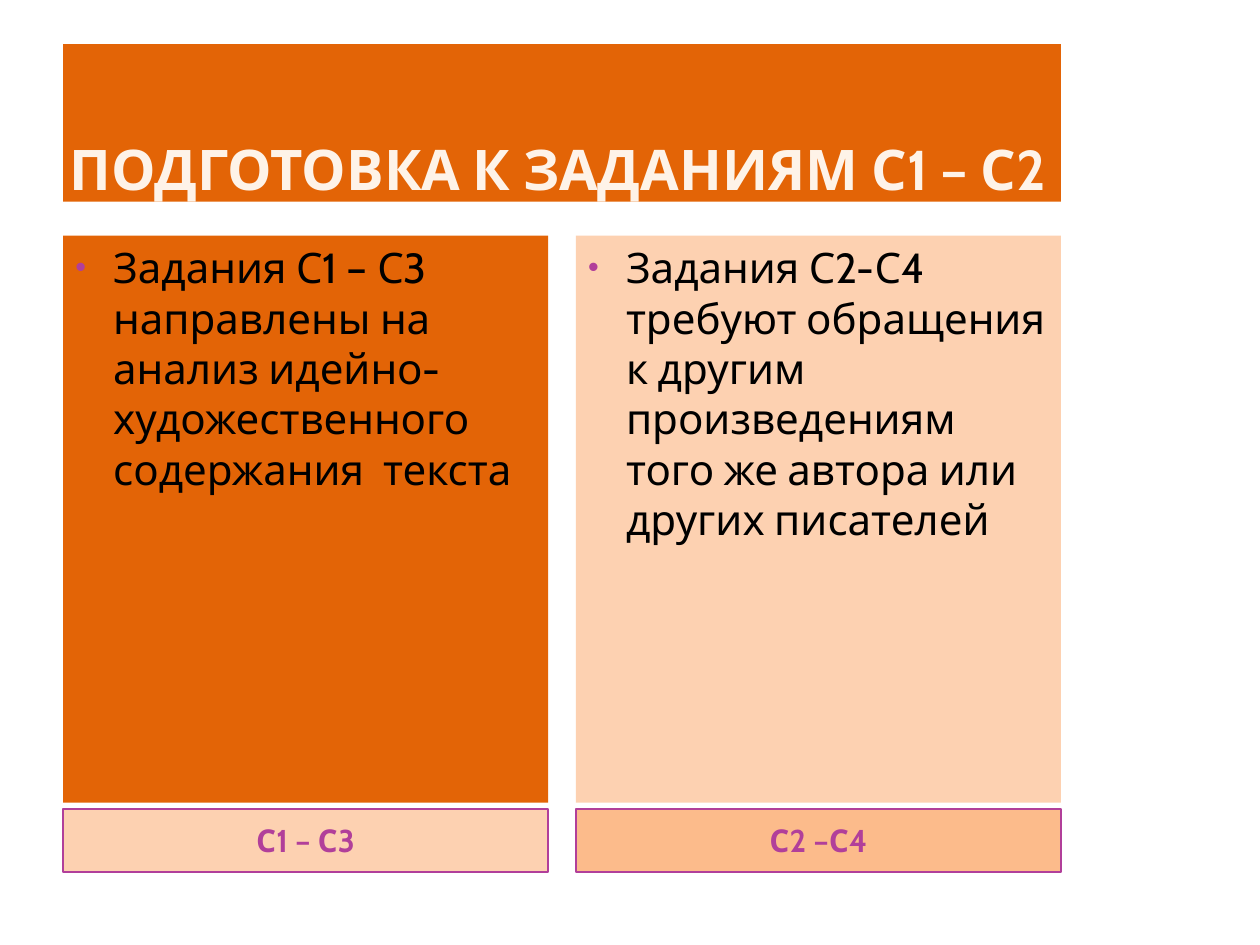
from dataclasses import dataclass
from lxml.etree import SubElement
from pptx import Presentation
from pptx.dml.color import RGBColor
from pptx.enum.shapes import MSO_SHAPE
from pptx.enum.text import MSO_ANCHOR, PP_ALIGN
from pptx.oxml.ns import qn
from pptx.util import Inches, Pt


@dataclass(frozen=True)
class Theme:
    font: str = "Cabin"
    orange: str = "E36406"
    peach: str = "FDD1B1"
    apricot: str = "FCBB8B"
    purple: str = "B13F9A"
    cream: str = "FEF3E8"
    black: str = "000000"
    title_size: int = 32
    body_size: int = 24
    label_size: int = 18


THEME = Theme()

# Two-column grid, in inches
LEFT, COLUMN, GUTTER = 0.5, 3.85, 0.22
TITLE_ROW = (0.35, 1.25)
BODY_ROW = (1.87, 4.5)
LABEL_ROW = (6.42, 0.5)


def cell(column, row, span=1):
    top, height = row
    left = LEFT + column * (COLUMN + GUTTER)
    width = span * COLUMN + (span - 1) * GUTTER
    return [Inches(length) for length in (left, top, width, height)]


def apply(target, values):
    for name, value in values.items():
        setattr(target, name, value)


def add_panel(slide, place, fill, outline=None):
    panel = slide.shapes.add_shape(MSO_SHAPE.RECTANGLE, *place)
    panel.shadow.inherit = False
    panel.fill.solid()
    panel.fill.fore_color.rgb = RGBColor.from_string(fill)
    if outline:
        panel.line.color.rgb = RGBColor.from_string(outline)
        panel.line.width = Pt(1)
    else:
        panel.line.fill.background()
    return panel


def write(panel, text, color, size, bold=False, align=PP_ALIGN.LEFT, bullet=False, **frame):
    apply(panel.text_frame, {"word_wrap": True, **frame})
    paragraph = panel.text_frame.paragraphs[0]
    paragraph.text = text
    paragraph.alignment = align
    if bullet:
        add_bullet(paragraph)
    apply(paragraph.font, {"name": THEME.font, "size": Pt(size), "bold": bold})
    paragraph.font.color.rgb = RGBColor.from_string(color)


def add_bullet(paragraph):
    properties = paragraph._p.get_or_add_pPr()
    indent = Inches(0.3)
    properties.set("marL", str(indent))
    properties.set("indent", str(-indent))
    bullet_color = SubElement(properties, qn("a:buClr"))
    SubElement(bullet_color, qn("a:srgbClr"), val=THEME.purple)
    SubElement(properties, qn("a:buSzPct"), val="73000")
    SubElement(properties, qn("a:buFont"), typeface="Arial")
    SubElement(properties, qn("a:buChar"), char="•")


def add_title(slide, text):
    title = add_panel(slide, cell(0, TITLE_ROW, span=2), THEME.orange)
    write(title, text, THEME.cream, THEME.title_size, bold=True,
          vertical_anchor=MSO_ANCHOR.BOTTOM, margin_left=Inches(0.05),
          margin_right=Inches(0.05), margin_top=0, margin_bottom=0)


def add_label(slide, column, text, fill):
    label = add_panel(slide, cell(column, LABEL_ROW), fill, THEME.purple)
    write(label, text, THEME.purple, THEME.label_size, bold=True,
          align=PP_ALIGN.CENTER, vertical_anchor=MSO_ANCHOR.MIDDLE)


def add_description(slide, column, text, fill):
    description = add_panel(slide, cell(column, BODY_ROW), fill)
    write(description, text, THEME.black, THEME.body_size, bullet=True,
          vertical_anchor=MSO_ANCHOR.TOP)


def main():
    deck = Presentation()
    apply(deck, {"slide_width": Inches(10), "slide_height": Inches(7.5)})
    slide = deck.slides.add_slide(deck.slide_layouts[6])

    add_title(slide, "ПОДГОТОВКА К ЗАДАНИЯМ С1 – С2")

    # Task groups: label, label fill, description, description fill
    task_groups = [
        ("С1 – С3", THEME.peach,
         "Задания С1 – С3 направлены на анализ идейно-художественного содержания  текста",
         THEME.orange),
        ("С2 –С4", THEME.apricot,
         "Задания С2-С4  требуют обращения к другим произведениям того же автора "
         "или других писателей",
         THEME.peach),
    ]
    for column, (label, label_fill, description, description_fill) in enumerate(task_groups):
        add_label(slide, column, label, label_fill)
        add_description(slide, column, description, description_fill)

    deck.save("out.pptx")


if __name__ == "__main__":
    main()
